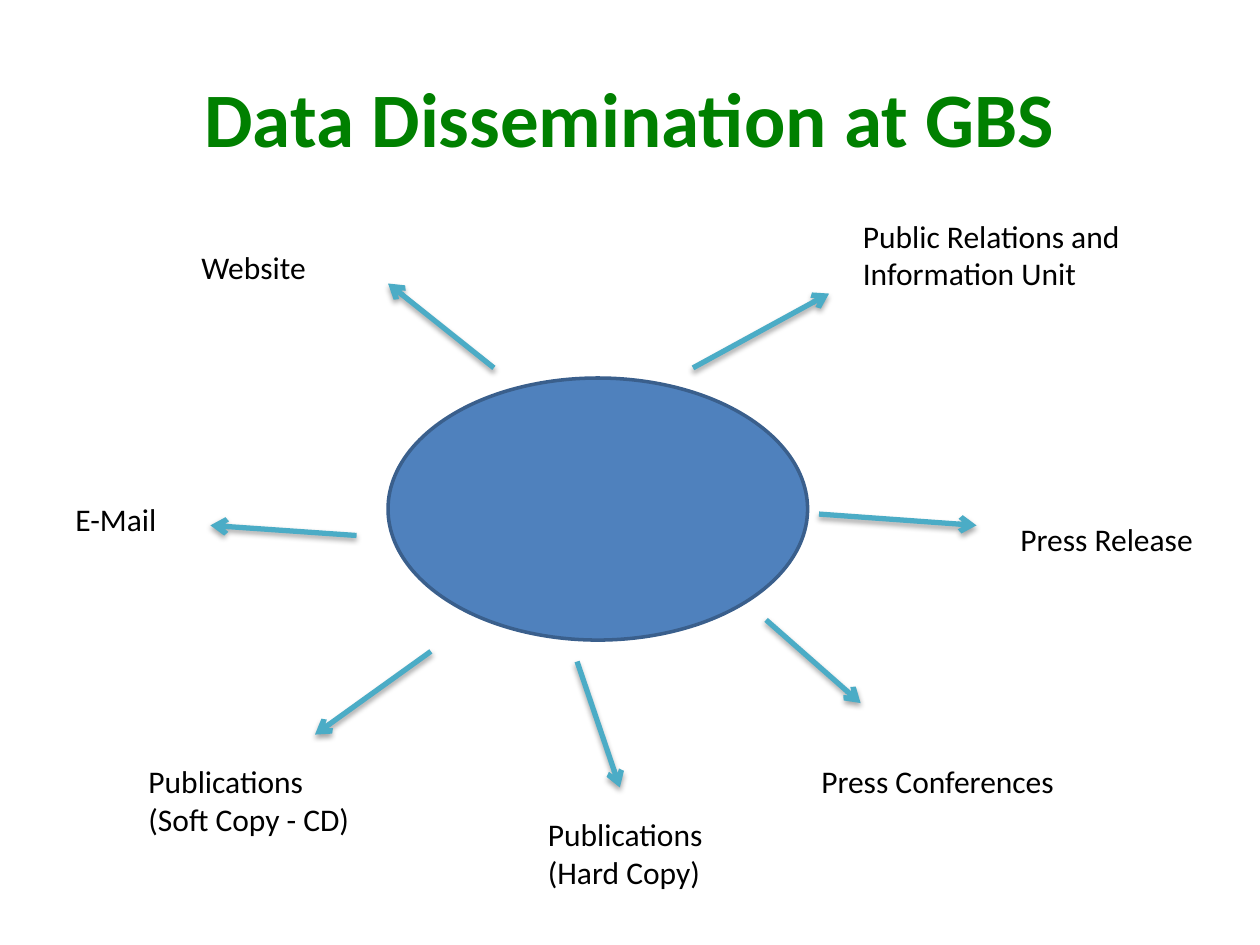
from lxml import etree
from pptx import Presentation
from pptx.dml.color import RGBColor
from pptx.enum import shapes, text
from pptx.oxml import parse_xml
from pptx.oxml.ns import qn
from pptx.util import Inches, Pt

GREEN = RGBColor(0x00, 0x80, 0x00)
BLACK = RGBColor(0x00, 0x00, 0x00)
BLUE = RGBColor(0x4F, 0x81, 0xBD)
DARK_BLUE = RGBColor(0x3A, 0x5F, 0x8C)
TEAL = RGBColor(0x4B, 0xAC, 0xC6)

SHADOW = (
    '<a:effectLst xmlns:a="http://schemas.openxmlformats.org/drawingml/2006/main">'
    '<a:outerShdw blurRad="40000" dist="23000" dir="5400000" rotWithShape="0">'
    '<a:srgbClr val="000000"><a:alpha val="35000"/></a:srgbClr>'
    '</a:outerShdw></a:effectLst>'
)

# Each channel: label, label box (left, top, width, height), arrow start, arrow end
CHANNELS = [
    ("Website", (1.5, 1.92, 1.08, 0.4), (3.92, 2.92), (3.08, 2.25)),
    ("Public Relations and Information Unit", (6.75, 1.67, 2.5, 0.71),
     (5.5, 2.92), (6.58, 2.33)),
    ("Press Release", (8, 4.08, 1.75, 0.4), (6.5, 4.08), (7.75, 4.17)),
    ("Press Conferences", (6.42, 6, 2.17, 0.4), (6.08, 4.92), (6.83, 5.58)),
    ("Publications\n(Hard Copy)", (4.25, 6.42, 1.67, 0.71),
     (4.58, 5.25), (4.92, 6.25)),
    ("Publications\n(Soft Copy - CD)", (1.08, 6, 1.92, 0.71),
     (3.42, 5.17), (2.5, 5.83)),
    ("E-Mail", (0.5, 3.92, 1, 0.4), (2.83, 4.25), (1.67, 4.17)),
]


def add_text(slide, content, box, size=18, color=BLACK, bold=False,
             align=text.PP_ALIGN.LEFT, anchor=text.MSO_ANCHOR.TOP):
    """Add a text box with one paragraph for each line of content."""
    tf = slide.shapes.add_textbox(*map(Inches, box)).text_frame
    tf.word_wrap = True
    tf.vertical_anchor = anchor
    tf.text = content
    for p in tf.paragraphs:
        p.alignment = align
        font = p.runs[0].font
        font.name = "Calibri"
        font.size = Pt(size)
        font.bold = bold
        font.color.rgb = color


def add_hub(slide, box):
    sp = slide.shapes.add_shape(shapes.MSO_SHAPE.OVAL, *map(Inches, box))
    sp.shadow.inherit = False
    sp.fill.solid()
    sp.fill.fore_color.rgb = BLUE
    sp.line.color.rgb = DARK_BLUE
    sp.line.width = Pt(2)


def add_arrow(slide, start, end):
    """Add a shadowed line with an open arrowhead at its end."""
    arrow = slide.shapes.add_connector(
        shapes.MSO_CONNECTOR.STRAIGHT, *map(Inches, start + end))
    arrow.line.color.rgb = TEAL
    arrow.line.width = Pt(3)
    etree.SubElement(arrow.line._get_or_add_ln(), qn("a:tailEnd"), type="arrow")
    arrow._element.spPr.append(parse_xml(SHADOW))


def main():
    prs = Presentation()
    prs.slide_width, prs.slide_height = Inches(10), Inches(7.5)
    slide = prs.slides.add_slide(prs.slide_layouts[6])

    add_text(slide, "Data Dissemination at GBS", (0.5, 0.3, 9, 1.25),
             size=44, color=GREEN, bold=True,
             align=text.PP_ALIGN.CENTER, anchor=text.MSO_ANCHOR.MIDDLE)
    add_hub(slide, (3.08, 3, 3.33, 2.08))
    for label, box, start, end in CHANNELS:
        add_arrow(slide, start, end)
        add_text(slide, label, box)

    prs.save("out.pptx")


if __name__ == "__main__":
    main()
